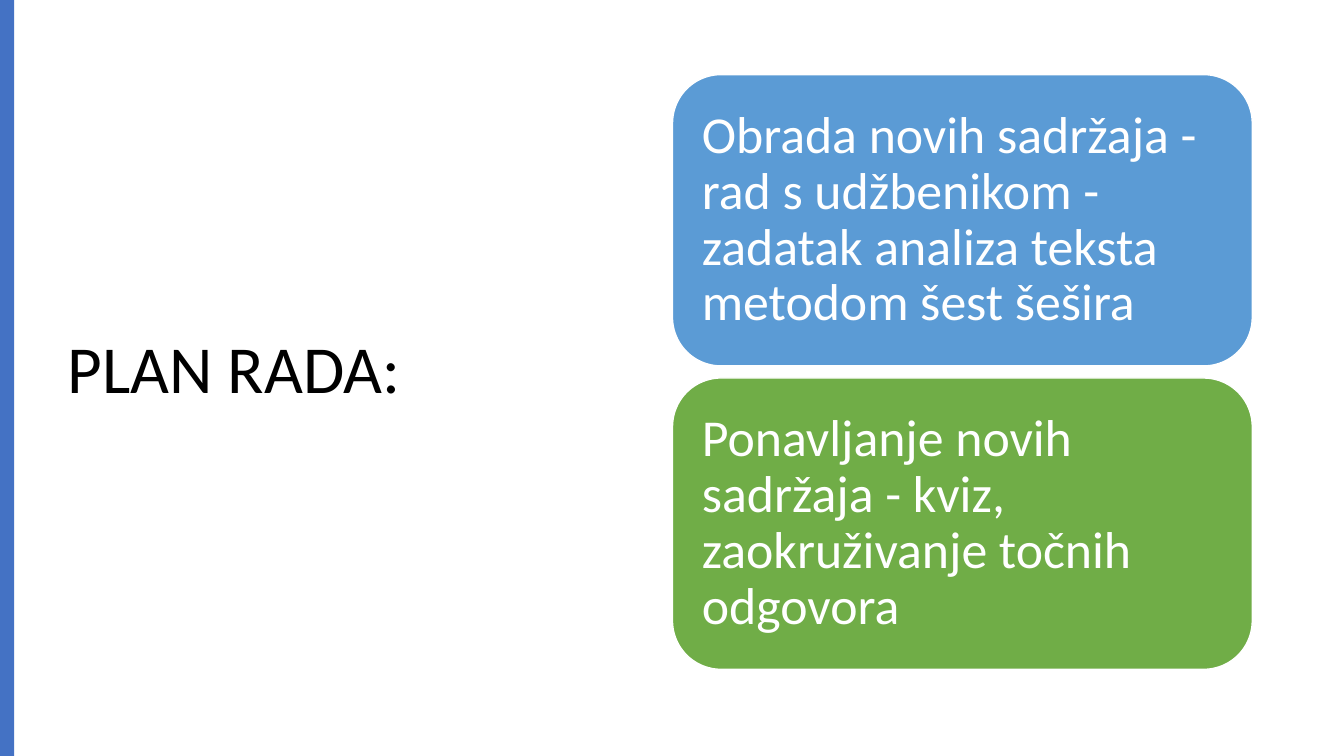
from dataclasses import dataclass

import pptx
import pptx.dml.color
import pptx.enum.shapes
import pptx.enum.text
import pptx.slide
import pptx.text.text
import pptx.util

RGBColor = pptx.dml.color.RGBColor
Inches = pptx.util.Inches
Shape = pptx.enum.shapes.MSO_SHAPE

BLACK = RGBColor(0x00, 0x00, 0x00)
WHITE = RGBColor(0xFF, 0xFF, 0xFF)
NAVY = RGBColor(0x44, 0x72, 0xC4)
BLUE = RGBColor(0x5B, 0x9B, 0xD5)
GREEN = RGBColor(0x70, 0xAD, 0x47)

FONT = "Calibri"
LEFT, TOP = 6.67, 0.74
WIDTH, HEIGHT = 5.75, 2.89
STEP = 3.01


@dataclass
class Card:
    text: str
    fill: RGBColor


CARDS = [
    Card("Obrada novih sadržaja - rad s udžbenikom - zadatak analiza teksta metodom šest šešira", BLUE),
    Card("Ponavljanje novih sadržaja - kviz, zaokruživanje točnih odgovora", GREEN),
]


def set_text(frame: pptx.text.text.TextFrame, text: str, size: int, color: RGBColor) -> None:
    frame.text = text
    frame.word_wrap = True
    frame.auto_size = pptx.enum.text.MSO_AUTO_SIZE.NONE
    frame.vertical_anchor = pptx.enum.text.MSO_ANCHOR.MIDDLE
    para = frame.paragraphs[0]
    para.alignment = pptx.enum.text.PP_ALIGN.LEFT
    para.line_spacing = 0.9
    font = para.runs[0].font
    font.name = FONT
    font.size = pptx.util.Pt(size)
    font.color.rgb = color


def add_title(slide: pptx.slide.Slide) -> None:
    title = slide.shapes.title
    title.left, title.top = Inches(0.57), Inches(0.68)
    title.width, title.height = Inches(5.67), Inches(6.02)
    set_text(title.text_frame, "PLAN RADA:", 48, BLACK)


def add_stripe(slide: pptx.slide.Slide) -> None:
    stripe = slide.shapes.add_shape(Shape.RECTANGLE, 0, 0, Inches(0.14), Inches(7.5))
    stripe.shadow.inherit = False
    stripe.fill.solid()
    stripe.fill.fore_color.rgb = NAVY
    stripe.line.fill.background()


def add_card(slide: pptx.slide.Slide, card: Card, top: float) -> None:
    box = slide.shapes.add_shape(
        Shape.ROUNDED_RECTANGLE, Inches(LEFT), Inches(top), Inches(WIDTH), Inches(HEIGHT)
    )
    box.shadow.inherit = False
    box.fill.solid()
    box.fill.fore_color.rgb = card.fill
    box.line.color.rgb = WHITE
    box.line.width = pptx.util.Pt(1)
    frame = box.text_frame
    frame.margin_left = frame.margin_right = Inches(0.15)
    frame.margin_top = frame.margin_bottom = Inches(0.15)
    set_text(frame, card.text, 37, WHITE)


def main() -> None:
    deck = pptx.Presentation()
    deck.slide_width, deck.slide_height = Inches(13.33), Inches(7.5)
    slide = deck.slides.add_slide(deck.slide_layouts.get_by_name("Title Only"))
    add_title(slide)
    add_stripe(slide)
    for row, card in enumerate(CARDS):
        add_card(slide, card, TOP + row * STEP)
    deck.save("out.pptx")


if __name__ == "__main__":
    main()
